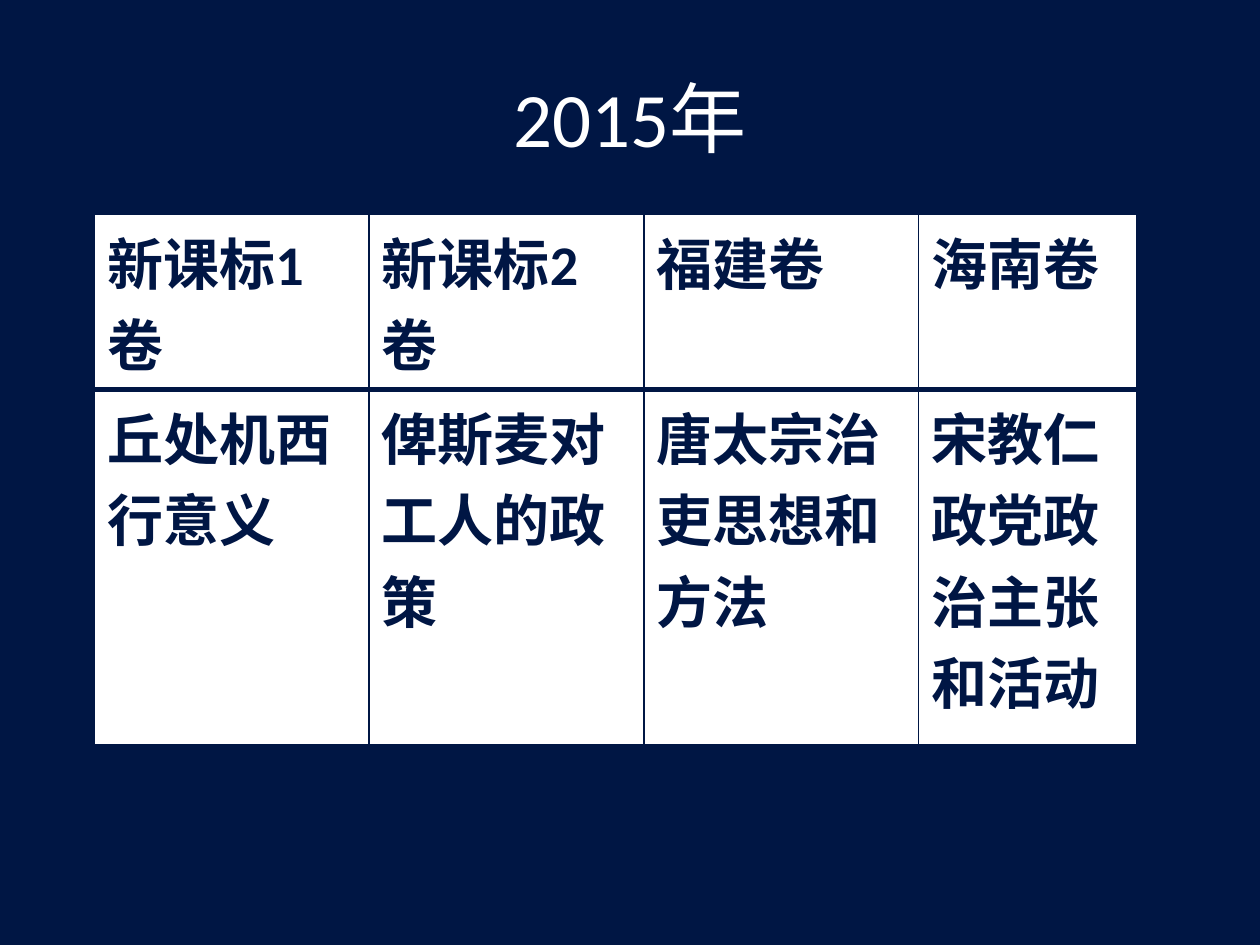
from dataclasses import dataclass

from lxml.etree import SubElement
from pptx import Presentation
from pptx.dml.color import RGBColor as Rgb
from pptx.enum.text import MSO_ANCHOR as Anchor, PP_ALIGN as Align
from pptx.oxml.ns import qn
from pptx.table import _Cell as Cell
from pptx.text.text import TextFrame
from pptx.util import Inches, Pt


@dataclass(frozen=True)
class Theme:
    navy: str = "001644"
    white: str = "FFFFFF"
    font: str = "Calibri"
    title_size: int = 44
    cell_size: int = 32
    thin: int = 1
    thick: int = 3


@dataclass(frozen=True)
class Exam:
    paper: str
    topic: str
    width: float


THEME = Theme()
EXAMS = [
    Exam("新课标1卷", "丘处机西行意义", 2.18),
    Exam("新课标2卷", "俾斯麦对工人的政策", 2.18),
    Exam("福建卷", "唐太宗治吏思想和方法", 2.18),
    Exam("海南卷", "宋教仁政党政治主张和活动", 1.73),
]
ROW_HEIGHTS = [1.39, 2.82]


def write(frame: TextFrame, text: str, *, size: int, color: str,
          bold: bool = False, align: Align = Align.LEFT) -> None:
    frame.word_wrap = True
    paragraph = frame.paragraphs[0]
    paragraph.alignment = align
    run = paragraph.add_run()
    run.text = text
    run.font.name = THEME.font
    run.font.size = Pt(size)
    run.font.bold = bold
    run.font.color.rgb = Rgb.from_string(color)


def add_borders(cell: Cell, *, top: int, bottom: int) -> None:
    properties = cell._tc.get_or_add_tcPr()
    widths = {"lnL": THEME.thin, "lnR": THEME.thin, "lnT": top, "lnB": bottom}
    for position, (side, width) in enumerate(widths.items()):
        line = properties.makeelement(qn(f"a:{side}"), {"w": str(Pt(width))})
        fill = SubElement(line, qn("a:solidFill"))
        SubElement(fill, qn("a:srgbClr"), val=THEME.navy)
        properties.insert(position, line)


def fill_cell(cell: Cell, text: str, *, top: int, bottom: int) -> None:
    cell.fill.solid()
    cell.fill.fore_color.rgb = Rgb.from_string(THEME.white)
    add_borders(cell, top=top, bottom=bottom)
    write(cell.text_frame, text, size=THEME.cell_size, color=THEME.navy, bold=True)


def main() -> None:
    deck = Presentation()
    deck.slide_width, deck.slide_height = Inches(10), Inches(7.5)
    slide = deck.slides.add_slide(deck.slide_layouts[6])
    slide.background.fill.solid()
    slide.background.fill.fore_color.rgb = Rgb.from_string(THEME.navy)

    year = slide.shapes.add_textbox(Inches(0.5), Inches(0.3), Inches(9), Inches(1.25))
    year.text_frame.vertical_anchor = Anchor.MIDDLE
    write(year.text_frame, "2015年", size=THEME.title_size,
          color=THEME.white, align=Align.CENTER)

    exam_table = slide.shapes.add_table(
        len(ROW_HEIGHTS), len(EXAMS), Inches(0.75), Inches(1.7),
        Inches(sum(exam.width for exam in EXAMS)), Inches(sum(ROW_HEIGHTS)),
    ).table
    for row, height in zip(exam_table.rows, ROW_HEIGHTS):
        row.height = Inches(height)
    for column, exam in enumerate(EXAMS):
        exam_table.columns[column].width = Inches(exam.width)
        fill_cell(exam_table.cell(0, column), exam.paper,
                  top=THEME.thin, bottom=THEME.thick)
        fill_cell(exam_table.cell(1, column), exam.topic,
                  top=THEME.thick, bottom=THEME.thin)

    deck.save("out.pptx")


if __name__ == "__main__":
    main()
